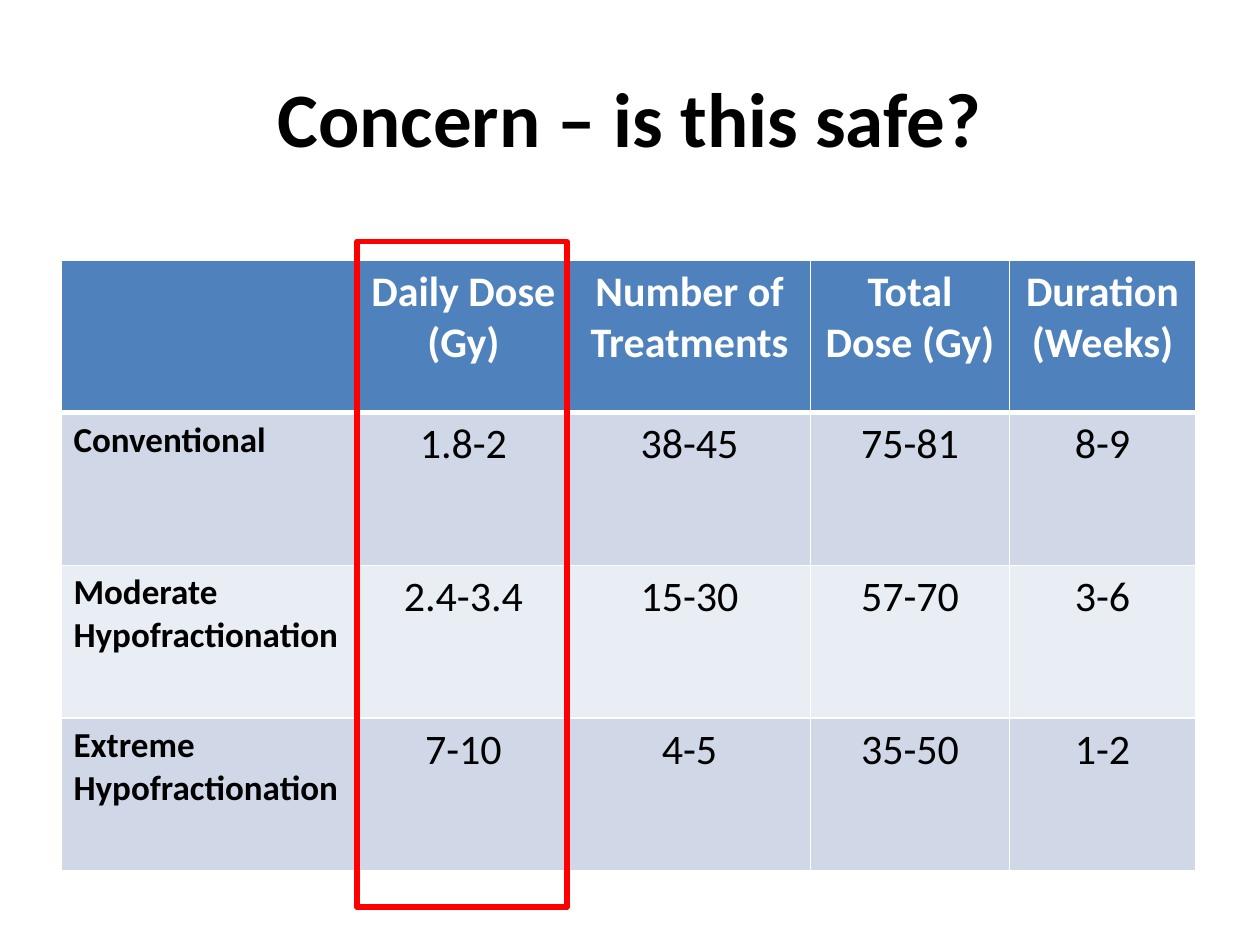
import pptx
import pptx.dml.color
import pptx.enum.shapes
import pptx.enum.text
import pptx.oxml
import pptx.oxml.ns
import pptx.util
from lxml import etree

Pt = pptx.util.Pt
ALIGN = pptx.enum.text.PP_ALIGN
COLORS = {
    "header": "4F81BD",
    "odd_row": "D0D8E8",
    "even_row": "E9EDF4",
    "white": "FFFFFF",
    "black": "000000",
    "highlight": "FF0000",
}
COLUMN_WIDTHS = [170, 120, 138.5, 113.5, 106.5]
ROW_HEIGHT = 87.25
DOSE_ROWS = [
    ["", "Daily Dose (Gy)", "Number of Treatments", "Total Dose (Gy)", "Duration (Weeks)"],
    ["Conventional", "1.8-2", "38-45", "75-81", "8-9"],
    ["Moderate Hypofractionation", "2.4-3.4", "15-30", "57-70", "3-6"],
    ["Extreme Hypofractionation", "7-10", "4-5", "35-50", "1-2"],
]


def rgb(name):
    return pptx.dml.color.RGBColor.from_string(COLORS[name])


def write(frame, text, size, color, bold, align):
    frame.text = text
    paragraph = frame.paragraphs[0]
    paragraph.alignment = align
    for run in paragraph.runs:
        run.font.name = "Calibri"
        run.font.size = Pt(size)
        run.font.bold = bold
        run.font.color.rgb = rgb(color)


deck = pptx.Presentation()
deck.slide_width, deck.slide_height = Pt(720), Pt(540)
slide = deck.slides.add_slide(deck.slide_layouts[6])

title = slide.shapes.add_textbox(Pt(36), Pt(21.6), Pt(648), Pt(90)).text_frame
title.word_wrap = True
title.vertical_anchor = pptx.enum.text.MSO_ANCHOR.MIDDLE
write(title, "Concern – is this safe?", 44, "black", True, ALIGN.CENTER)

doses = slide.shapes.add_table(
    len(DOSE_ROWS), len(COLUMN_WIDTHS), Pt(34.8), Pt(148.6),
    Pt(sum(COLUMN_WIDTHS)), Pt(ROW_HEIGHT * len(DOSE_ROWS))).table
for column, width in zip(doses.columns, COLUMN_WIDTHS):
    column.width = Pt(width)

for r, row in enumerate(DOSE_ROWS):
    doses.rows[r].height = Pt(ROW_HEIGHT)
    is_header = r == 0
    row_fill = "header" if is_header else ("odd_row" if r % 2 else "even_row")
    for c, text in enumerate(row):
        cell = doses.cell(r, c)
        is_label = c == 0
        write(cell.text_frame, text, 20 if is_label else 24,
              "white" if is_header else "black", is_header or is_label,
              ALIGN.LEFT if is_label else ALIGN.CENTER)

        # Borders come before the fill in the cell properties
        properties = cell._tc.get_or_add_tcPr()
        for side in ("lnL", "lnR", "lnT", "lnB"):
            thick = (side == "lnB" and r == 0) or (side == "lnT" and r == 1)
            border = etree.SubElement(properties, pptx.oxml.ns.qn("a:" + side),
                                      w=str(Pt(3 if thick else 1)))
            solid = etree.SubElement(border, pptx.oxml.ns.qn("a:solidFill"))
            etree.SubElement(solid, pptx.oxml.ns.qn("a:srgbClr"), val=COLORS["white"])
        cell.fill.solid()
        cell.fill.fore_color.rgb = rgb(row_fill)

daily_dose_frame = slide.shapes.add_shape(
    pptx.enum.shapes.MSO_SHAPE.RECTANGLE, Pt(204), Pt(138), Pt(120), Pt(380.4))
daily_dose_frame.shadow.inherit = False
daily_dose_frame.fill.background()
daily_dose_frame.line.color.rgb = rgb("highlight")
daily_dose_frame.line.width = Pt(3)

deck.save("out.pptx")
